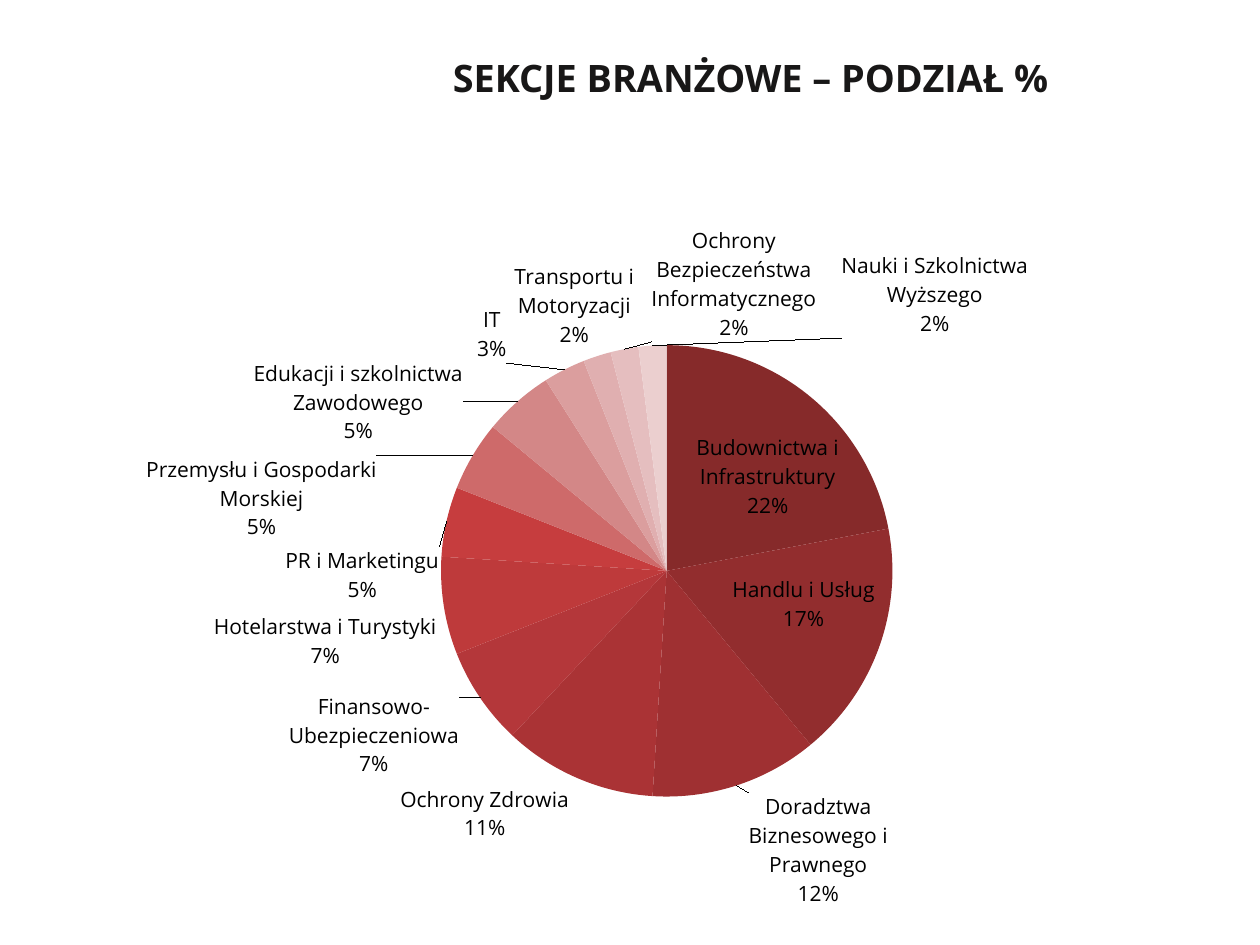
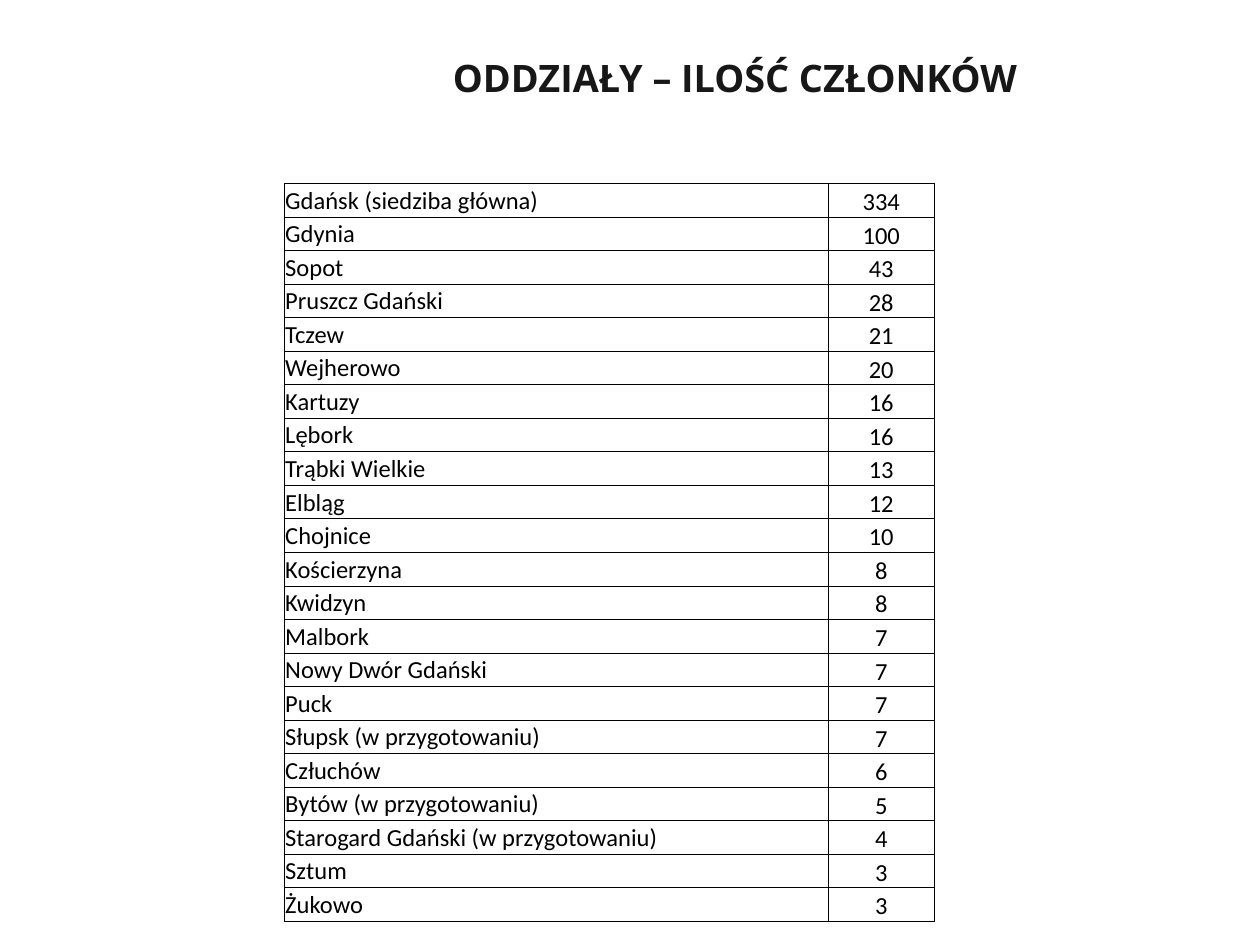
from pptx import Presentation
from pptx import util as u
from pptx.chart import data as chart_data
from pptx.dml.color import RGBColor
from pptx.enum import chart as chart_enum, text
from pptx.oxml import ns, parse_xml

INK = RGBColor(0x18, 0x17, 0x17)
BLACK = RGBColor(0, 0, 0)
SLICE_COLOURS = [RGBColor.from_string(code) for code in (
    "862A2A", "922D2E", "9F3032", "AA3335", "B4373A", "BE3A3B", "C63D3E",
    "CE6A6A", "D38787", "DB9E9E", "E0AFB0", "E5BEBF", "EBCFCF")]
TITLE_FONT = "Open Sans"
TABLE_FONT = "Calibri"

SECTIONS_TITLE = "SEKCJE BRANŻOWE – PODZIAŁ %"
SECTIONS = [
    ("Budownictwa i Infrastruktury", 22, (-2.4, 2.6)),
    ("Handlu i Usług", 17, (-3.1, -1.5)),
    ("Doradztwa\nBiznesowego i\nPrawnego", 12, (0.2, 0)),
    ("Ochrony Zdrowia", 11, (-0.1, 0)),
    ("Finansowo-Ubezpieczeniowa", 7, (-0.3, -0.2)),
    ("Hotelarstwa i Turystyki", 7, (0, 0.1)),
    ("PR i Marketingu", 5, (0, 1.7)),
    ("Przemysłu i Gospodarki Morskiej", 5, (-1.8, 1.8)),
    ("Edukacji i szkolnictwa Zawodowego", 5, (-1, 1)),
    ("IT", 3, (-1.1, 0)),
    ("Transportu i\nMotoryzacji", 2, (0.8, 0)),
    ("Ochrony Bezpieczeństwa Informatycznego", 2, (3.9, 0)),
    ("Nauki i Szkolnictwa Wyższego", 2, (5.7, 0)),
]
CHART_LEFT, CHART_TOP, CHART_WIDTH, CHART_HEIGHT = 0.36, 4.19, 24.43, 14.53
PIE_LEFT, PIE_TOP, PIE_SIZE = 8.53, 2.77, 9.1

BRANCHES_TITLE = "ODDZIAŁY – ILOŚĆ CZŁONKÓW"
BRANCHES = [
    ("Gdańsk (siedziba główna)", 334),
    ("Gdynia", 100),
    ("Sopot", 43),
    ("Pruszcz Gdański", 28),
    ("Tczew", 21),
    ("Wejherowo", 20),
    ("Kartuzy", 16),
    ("Lębork", 16),
    ("Trąbki Wielkie", 13),
    ("Elbląg", 12),
    ("Chojnice", 10),
    ("Kościerzyna", 8),
    ("Kwidzyn", 8),
    ("Malbork", 7),
    ("Nowy Dwór Gdański", 7),
    ("Puck", 7),
    ("Słupsk (w przygotowaniu)", 7),
    ("Człuchów", 6),
    ("Bytów (w przygotowaniu)", 5),
    ("Starogard Gdański (w przygotowaniu)", 4),
    ("Sztum", 3),
    ("Żukowo", 3),
]
COLUMN_WIDTHS = (10.96, 2.15)
TABLE_HEIGHT = 14.88


def add_titled_slide(presentation, title):
    slide = presentation.slides.add_slide(presentation.slide_layouts[6])
    box = slide.shapes.add_textbox(u.Cm(8.88), u.Cm(1.06), u.Cm(14.2), u.Cm(1.12))
    frame = box.text_frame
    frame.word_wrap = True
    frame.vertical_anchor = text.MSO_ANCHOR.MIDDLE
    frame.text = title
    paragraph = frame.paragraphs[0]
    paragraph.line_spacing = 0.9
    style_font(paragraph.font, TITLE_FONT, 21.6, INK)
    paragraph.font.bold = True
    return slide


def style_font(font, name, size, colour):
    font.name = name
    font.size = u.Pt(size)
    font.color.rgb = colour


def manual_layout(x, y, extra=""):
    return (f'<c:layout {ns.nsdecls("c")}><c:manualLayout>{extra}'
            f'<c:x val="{x:.4f}"/><c:y val="{y:.4f}"/>')


def place_pie(chart):
    area = chart._chartSpace.chart.plotArea
    for layout in area.findall(ns.qn("c:layout")):
        area.remove(layout)
    modes = ('<c:layoutTarget val="inner"/>'
             '<c:xMode val="edge"/><c:yMode val="edge"/>')
    start = manual_layout(PIE_LEFT / CHART_WIDTH, PIE_TOP / CHART_HEIGHT, modes)
    area.insert(0, parse_xml(
        f'{start}<c:w val="{PIE_SIZE / CHART_WIDTH:.4f}"/>'
        f'<c:h val="{PIE_SIZE / CHART_HEIGHT:.4f}"/></c:manualLayout></c:layout>'))


def place_labels(series):
    labels = series.data_labels
    labels.show_value = False
    labels.show_percentage = True
    labels.show_category_name = True
    labels.position = chart_enum.XL_LABEL_POSITION.OUTSIDE_END
    style_font(labels.font, TITLE_FONT, 12, BLACK)
    element = series._element.find(ns.qn("c:dLbls"))
    separator = f'<c:separator {ns.nsdecls("c")}>\n</c:separator>'
    element.find(ns.qn("c:showBubbleSize")).addnext(parse_xml(separator))
    for index, (_, _, (dx, dy)) in enumerate(SECTIONS):
        start = manual_layout(dx / CHART_WIDTH, dy / CHART_HEIGHT)
        element.insert(index, parse_xml(
            f'<c:dLbl {ns.nsdecls("c")}><c:idx val="{index}"/>'
            f'{start}</c:manualLayout></c:layout>'
            '<c:dLblPos val="outEnd"/><c:showLegendKey val="0"/>'
            '<c:showVal val="0"/><c:showCatName val="1"/>'
            '<c:showSerName val="0"/><c:showPercent val="1"/>'
            f'<c:showBubbleSize val="0"/>{separator}</c:dLbl>'))


def add_sections_chart(slide):
    values = chart_data.CategoryChartData()
    values.categories = [name for name, _, _ in SECTIONS]
    values.add_series("Series 1", [percent for _, percent, _ in SECTIONS])
    chart = slide.shapes.add_chart(
        chart_enum.XL_CHART_TYPE.PIE, u.Cm(CHART_LEFT), u.Cm(CHART_TOP),
        u.Cm(CHART_WIDTH), u.Cm(CHART_HEIGHT), values).chart
    chart.has_title = False
    chart.has_legend = False
    style_font(chart.font, TITLE_FONT, 12, BLACK)
    plot = chart.plots[0]
    plot.vary_by_categories = True
    series = plot.series[0]
    for index, colour in enumerate(SLICE_COLOURS):
        slice_format = series.points[index].format
        slice_format.fill.solid()
        slice_format.fill.fore_color.rgb = colour
        slice_format.line.fill.background()
    place_labels(series)
    place_pie(chart)


def style_cell(cell, alignment, anchor):
    cell.margin_left = cell.margin_right = cell.margin_top = u.Cm(0.02)
    cell.margin_bottom = 0
    cell.vertical_anchor = anchor
    cell.fill.background()
    paragraph = cell.text_frame.paragraphs[0]
    paragraph.alignment = alignment
    style_font(paragraph.runs[0].font, TABLE_FONT, 14, BLACK)
    properties = cell._tc.get_or_add_tcPr()
    for index, side in enumerate("LRTB"):
        properties.insert(index, parse_xml(
            f'<a:ln{side} {ns.nsdecls("a")} w="{u.Pt(0.5)}"><a:solidFill>'
            f'<a:srgbClr val="{BLACK}"/></a:solidFill></a:ln{side}>'))


def add_branches_table(slide):
    table = slide.shapes.add_table(
        len(BRANCHES), len(COLUMN_WIDTHS), u.Cm(5.73), u.Cm(3.7),
        u.Cm(sum(COLUMN_WIDTHS)), u.Cm(TABLE_HEIGHT)).table
    table.first_row = False
    table.horz_banding = False
    for column, width in zip(table.columns, COLUMN_WIDTHS):
        column.width = u.Cm(width)
    styles = ((text.PP_ALIGN.LEFT, text.MSO_ANCHOR.MIDDLE),
              (text.PP_ALIGN.CENTER, text.MSO_ANCHOR.BOTTOM))
    for row, branch in zip(table.rows, BRANCHES):
        row.height = u.Cm(TABLE_HEIGHT / len(BRANCHES))
        for cell, value, style in zip(row.cells, branch, styles):
            cell.text_frame.text = str(value)
            style_cell(cell, *style)


def main():
    presentation = Presentation()
    presentation.slide_width = u.Cm(25.4)
    presentation.slide_height = u.Cm(19.05)
    add_sections_chart(add_titled_slide(presentation, SECTIONS_TITLE))
    add_branches_table(add_titled_slide(presentation, BRANCHES_TITLE))
    presentation.save("out.pptx")


if __name__ == "__main__":
    main()
